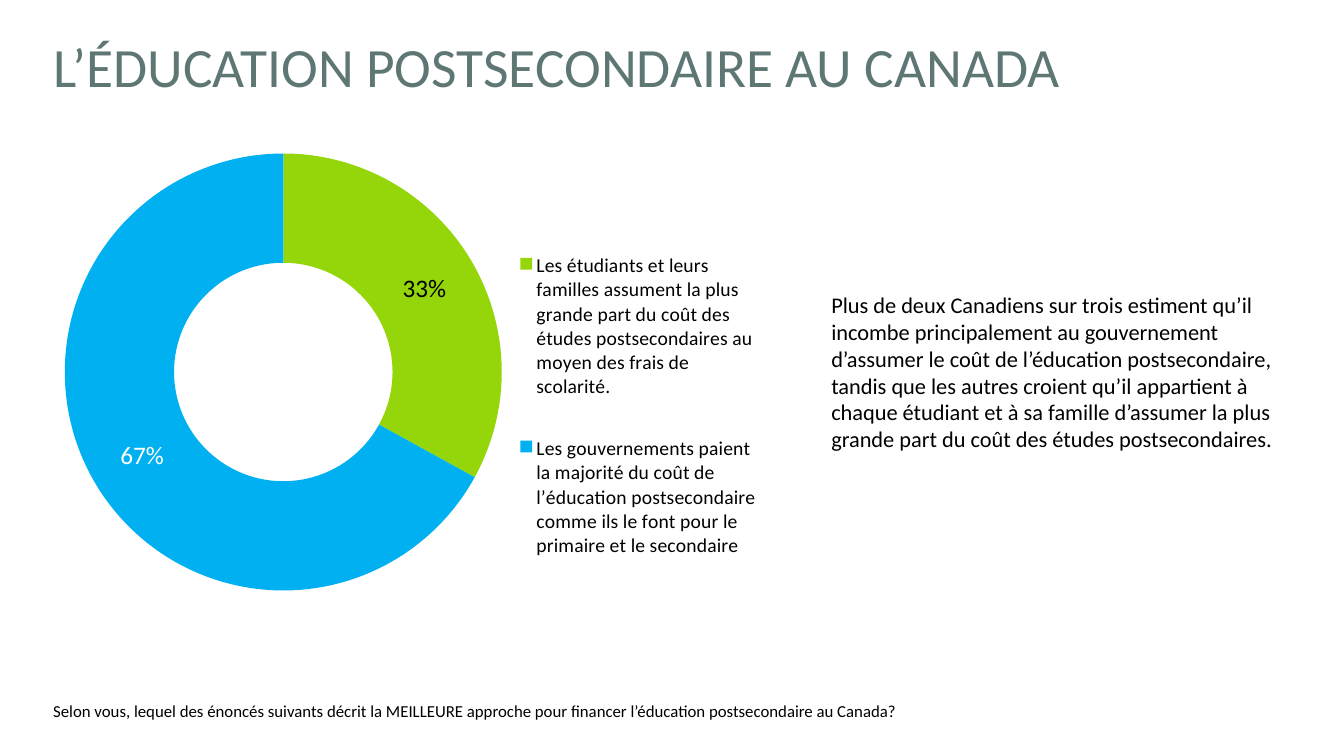
from lxml import etree
from pptx import Presentation
from pptx.chart.data import CategoryChartData
from pptx.dml.color import RGBColor
from pptx.enum.chart import XL_CHART_TYPE, XL_LEGEND_POSITION
from pptx.enum.text import MSO_ANCHOR, PP_ALIGN
from pptx.oxml.ns import qn
from pptx.util import Cm, Pt

DOUGHNUT = XL_CHART_TYPE.DOUGHNUT
LEGEND_RIGHT = XL_LEGEND_POSITION.RIGHT
MIDDLE, TOP = MSO_ANCHOR.MIDDLE, MSO_ANCHOR.TOP
LEFT = PP_ALIGN.LEFT

FONT = "Calibri"
BLACK, WHITE, SLATE = "000000", "FFFFFF", "5E7775"
SHARES = [
    ("Les étudiants et leurs familles assument la plus grande part du coût "
     "des études postsecondaires au moyen des frais de scolarité.", 33, "94D60A"),
    ("Les gouvernements paient la majorité du coût de l’éducation "
     "postsecondaire comme ils le font pour le primaire et le secondaire", 67, "00B0F0"),
]


def color(value):
    return RGBColor.from_string(value)


def format_font(font, size, fill=BLACK):
    font.name = FONT
    font.size = Pt(size)
    font.bold = False
    font.color.rgb = color(fill)


def write_text(box, text, size, fill=BLACK, anchor=TOP, line_spacing=1.0):
    frame = box.text_frame
    frame.word_wrap = True
    frame.vertical_anchor = anchor
    para = frame.paragraphs[0]
    para.alignment = LEFT
    para.line_spacing = line_spacing
    span = para.add_run()
    span.text = text
    format_font(span.font, size, fill)


def add_title(page, area, text):
    title = page.shapes.title
    title.left, title.top, title.width, title.height = area
    write_text(title, text, 39.6, fill=SLATE, anchor=MIDDLE, line_spacing=0.9)


def add_text(page, area, text, size, **options):
    write_text(page.shapes.add_textbox(*area), text, size, **options)


def set_layout(element, position, target=None):
    """Place a chart region by fractions of the chart frame."""
    for old in element.findall(qn("c:layout")):
        element.remove(old)
    layout = etree.Element(qn("c:layout"))
    manual = etree.SubElement(layout, qn("c:manualLayout"))
    settings = [("layoutTarget", target)] if target else []
    settings += [("xMode", "edge"), ("yMode", "edge"), *zip("xywh", position)]
    for name, value in settings:
        etree.SubElement(manual, qn(f"c:{name}")).set("val", str(value))
    if target:
        element.insert(0, layout)
    else:
        element.find(qn("c:legendPos")).addnext(layout)


def add_share_chart(page, area):
    data = CategoryChartData(number_format="0")
    data.categories = [label for label, _, _ in SHARES]
    data.add_series("Series 1", [share for _, share, _ in SHARES])
    chart = page.shapes.add_chart(DOUGHNUT, *area, data).chart
    chart.has_title = False
    format_font(chart.font, 18)

    # Legend
    chart.has_legend = True
    legend = chart.legend
    legend.position = LEGEND_RIGHT
    legend.include_in_layout = False
    format_font(legend.font, 14)

    # Ring and percentages
    plot = chart.plots[0]
    plot.vary_by_categories = True
    series = plot.series[0]
    labels = series.data_labels
    labels.show_value = False
    labels.show_percentage = True
    labels.number_format = "0%"
    labels.number_format_is_linked = False
    format_font(labels.font, 18, WHITE)
    for index, (_, _, fill) in enumerate(SHARES):
        point_format = series.points[index].format
        point_format.fill.solid()
        point_format.fill.fore_color.rgb = color(fill)
        point_format.line.fill.background()
    format_font(series.points[0].data_label.font, 18)

    # The dark label also shows its percentage
    root = chart.element
    dark_label = next(root.iter(qn("c:dLbl")))
    dark_label.find(qn("c:showVal")).set("val", "0")
    dark_label.find(qn("c:showPercent")).set("val", "1")

    # Positions inside the chart frame
    set_layout(next(root.iter(qn("c:plotArea"))), (0.02, 0.08, 0.61, 0.84), "inner")
    set_layout(next(root.iter(qn("c:legend"))), (0.65, 0.2, 0.34, 0.73))


def build_slide(deck):
    page = deck.slides.add_slide(deck.slide_layouts[5])
    left = Cm(1.09)
    add_title(page, (left, Cm(0.46), Cm(32.31), Cm(2.59)),
              "L’ÉDUCATION POSTSECONDAIRE AU CANADA")
    add_share_chart(page, (Cm(1.27), Cm(2.82), Cm(18.06), Cm(13.11)))
    # Finding
    add_text(page, (Cm(20.7), Cm(7.21), Cm(12.22), Cm(4.37)),
             "Plus de deux Canadiens sur trois estiment qu’il incombe principalement "
             "au gouvernement d’assumer le coût de l’éducation postsecondaire, tandis "
             "que les autres croient qu’il appartient à chaque étudiant et à sa famille "
             "d’assumer la plus grande part du coût des études postsecondaires.", 16)
    # Survey question
    add_text(page, (left, Cm(17.02), Cm(25.32), Cm(1.85)),
             "Selon vous, lequel des énoncés suivants décrit la MEILLEURE approche "
             "pour financer l’éducation postsecondaire au Canada?",
             12, anchor=MIDDLE, line_spacing=0.9)


def main():
    deck = Presentation()
    deck.slide_width, deck.slide_height = Cm(33.87), Cm(19.05)
    build_slide(deck)
    deck.save("out.pptx")


if __name__ == "__main__":
    main()
